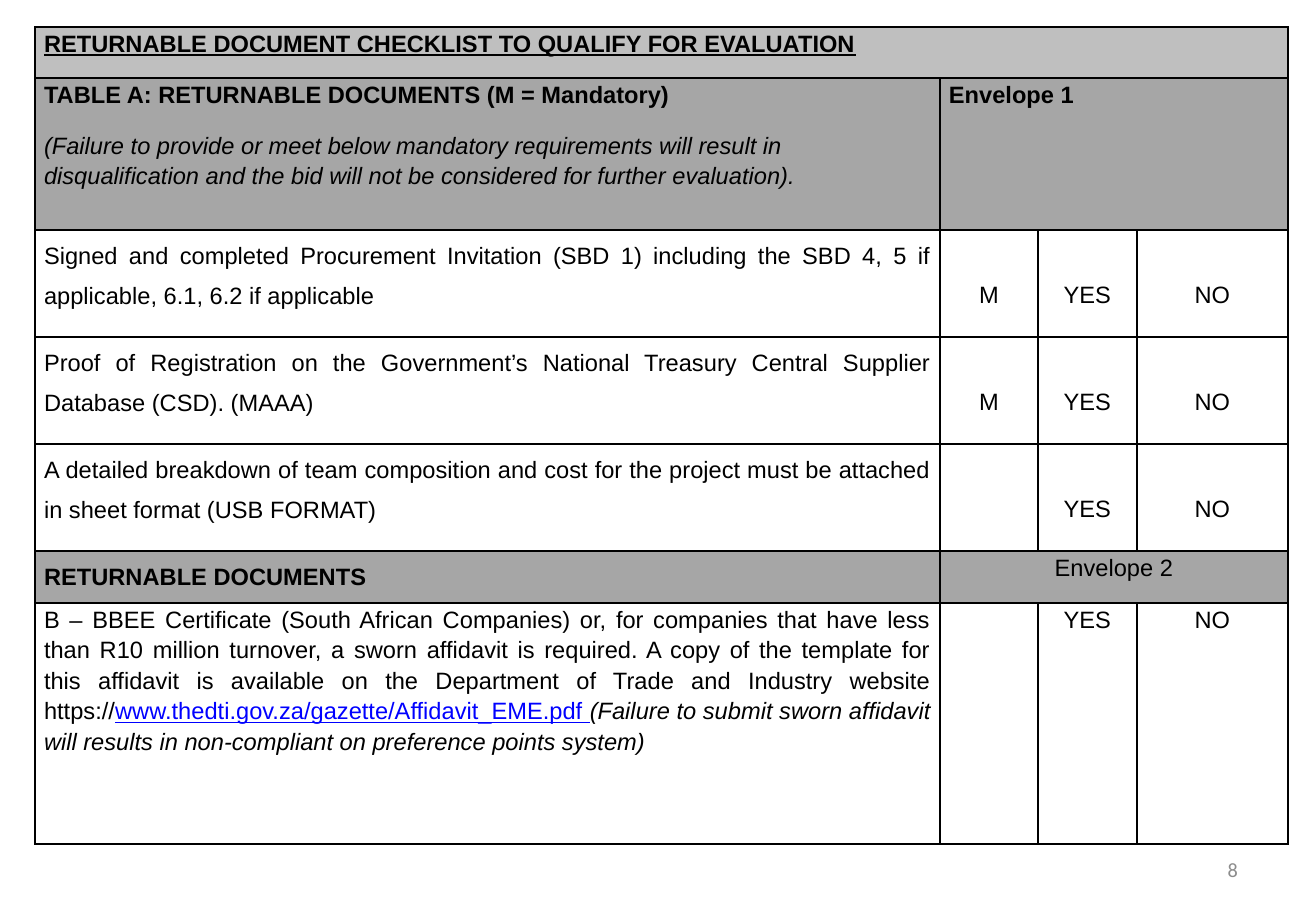
from lxml import etree
from pptx import Presentation
from pptx.dml.color import RGBColor
from pptx.enum.text import MSO_ANCHOR, PP_ALIGN
from pptx.oxml.ns import qn
from pptx.util import Emu, Pt

LEFT, CENTER, RIGHT, JUSTIFY = PP_ALIGN.LEFT, PP_ALIGN.CENTER, PP_ALIGN.RIGHT, PP_ALIGN.JUSTIFY
MIDDLE = MSO_ANCHOR.MIDDLE

BLACK, LINK_BLUE, PAGE_GREY = "000000", "0000FF", "8C8C8C"
HEADING_GREY, SECTION_GREY = "BFBFBF", "A6A6A6"
COLUMN_WIDTHS = [905, 98, 99, 151]
ROW_HEIGHTS = [51, 152, 107, 107, 107, 52, 241]
CELL_INSET = 9
ANSWER_DROP = 48

REQUIREMENTS = [
    ("Signed and completed Procurement Invitation (SBD 1) including the SBD 4, 5 "
     "if applicable, 6.1, 6.2 if applicable", "M"),
    ("Proof of Registration on the Government’s National Treasury Central Supplier "
     "Database (CSD). (MAAA)", "M"),
    ("A detailed breakdown of team composition and cost for the project must be "
     "attached in sheet format (USB FORMAT)", ""),
]
AFFIDAVIT = [
    ("B – BBEE Certificate (South African Companies) or, for companies that have less "
     "than R10 million turnover, a sworn affidavit is required. A copy of the template "
     "for this affidavit is available on the Department of Trade and Industry website "
     "https://", {}),
    ("www.thedti.gov.za/gazette/Affidavit_EME.pdf ", {"color": LINK_BLUE, "underline": True}),
    ("(Failure to submit sworn affidavit will results in non-compliant on preference "
     "points system)", {"italic": True}),
]


def px(length):
    return Emu(length * 7526)


def rgb(value):
    return RGBColor.from_string(value)


def add_run(paragraph, text, size=14, font="Arial", color=BLACK,
            bold=False, italic=False, underline=False):
    run = paragraph.add_run()
    run.text = text
    run.font.size, run.font.name = Pt(size), font
    run.font.bold, run.font.italic, run.font.underline = bold, italic, underline
    run.font.color.rgb = rgb(color)


def write(frame, content, align=LEFT, spacing=1.15, before=0, after=6, **style):
    """Fill the next paragraph with a string or a list of (text, format) runs."""
    paragraph = frame.paragraphs[0]
    if paragraph.runs:
        paragraph = frame.add_paragraph()
    paragraph.alignment, paragraph.line_spacing = align, spacing
    paragraph.space_before, paragraph.space_after = Pt(before), Pt(after)
    runs = [(content, {})] if isinstance(content, str) else content
    for text, changes in runs:
        add_run(paragraph, text, **{**style, **changes})


def format_cell(cell, fill=None):
    properties = cell._tc.get_or_add_tcPr()
    for side in ("a:lnL", "a:lnR", "a:lnT", "a:lnB"):
        border = etree.SubElement(properties, qn(side), w=str(Pt(1)))
        paint = etree.SubElement(border, qn("a:solidFill"))
        etree.SubElement(paint, qn("a:srgbClr"), val=BLACK)
    cell.margin_left = cell.margin_right = px(CELL_INSET)
    cell.margin_top = cell.margin_bottom = 0
    if fill:
        cell.fill.solid()
        cell.fill.fore_color.rgb = rgb(fill)
    else:
        cell.fill.background()


def write_answers(table, row, answers, drop=0):
    for column, answer in enumerate(answers, start=1):
        if answer:
            cell = table.cell(row, column)
            cell.margin_top = px(drop)
            write(cell.text_frame, answer, align=CENTER, after=10)


def add_checklist(slide, left, top):
    frame = slide.shapes.add_table(
        len(ROW_HEIGHTS), len(COLUMN_WIDTHS), px(left), px(top),
        px(sum(COLUMN_WIDTHS)), px(sum(ROW_HEIGHTS)))
    table = frame.table
    table.first_row = table.horz_banding = False
    for column, width in zip(table.columns, COLUMN_WIDTHS):
        column.width = px(width)
    row_fills = {0: HEADING_GREY, 1: SECTION_GREY, 5: SECTION_GREY}
    for index, (row, height) in enumerate(zip(table.rows, ROW_HEIGHTS)):
        row.height = px(height)
        for cell in row.cells:
            format_cell(cell, row_fills.get(index))
    for row, first_column in ((0, 0), (1, 1), (5, 1)):
        table.cell(row, first_column).merge(table.cell(row, 3))

    write(table.cell(0, 0).text_frame, "RETURNABLE DOCUMENT CHECKLIST TO QUALIFY FOR EVALUATION",
          bold=True, underline=True)

    mandatory = table.cell(1, 0).text_frame
    write(mandatory, "TABLE A: RETURNABLE DOCUMENTS (M = Mandatory)", bold=True)
    write(mandatory, "(Failure to provide or meet below mandatory requirements will result in "
          "disqualification and the bid will not be considered for further evaluation).",
          before=6, italic=True)
    write(table.cell(1, 1).text_frame, "Envelope 1", bold=True)

    for row, (requirement, mark) in enumerate(REQUIREMENTS, start=2):
        write(table.cell(row, 0).text_frame, requirement, align=JUSTIFY, spacing=1.5)
        write_answers(table, row, (mark, "YES", "NO"), drop=ANSWER_DROP)

    write(table.cell(5, 0).text_frame, "RETURNABLE DOCUMENTS",
          align=JUSTIFY, spacing=1.5, bold=True)
    write(table.cell(5, 1).text_frame, "Envelope 2", align=CENTER, after=10)

    write(table.cell(6, 0).text_frame, AFFIDAVIT, align=JUSTIFY)
    write_answers(table, 6, ("", "YES", "NO"))


def add_page_number(slide, left, top, width, height):
    frame = slide.shapes.add_textbox(px(left), px(top), px(width), px(height)).text_frame
    frame.word_wrap, frame.vertical_anchor = True, MIDDLE
    write(frame, "8", align=RIGHT, spacing=1.0, after=0,
          size=12, font="Calibri", color=PAGE_GREY)


def main():
    presentation = Presentation()
    presentation.slide_width, presentation.slide_height = px(1316), px(911)
    slide = presentation.slides.add_slide(presentation.slide_layouts[6])
    add_page_number(slide, 943, 845, 307, 49)
    add_checklist(slide, 35, 27)
    presentation.save("out.pptx")


if __name__ == "__main__":
    main()
